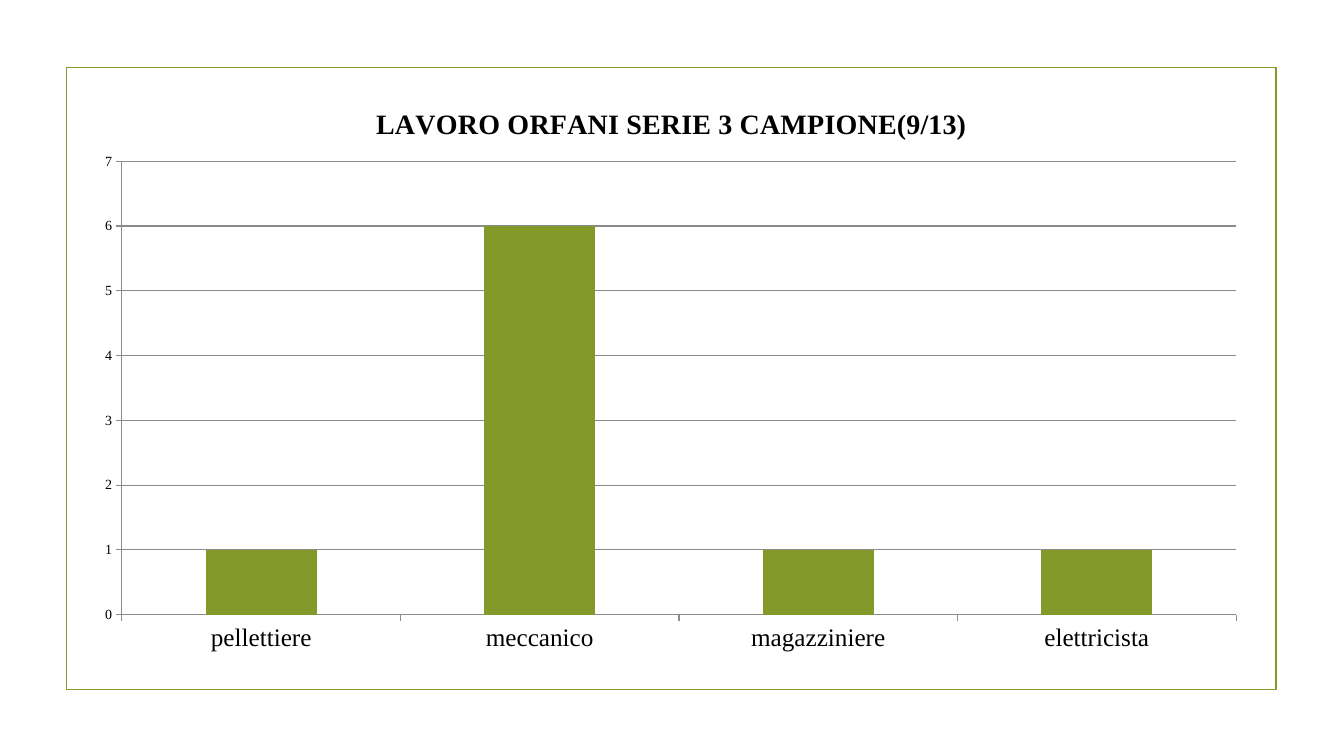
"""Build the slide with the column chart of the orphans' trades."""
import dataclasses
import typing

import pptx
import pptx.chart.data
import pptx.dml.color
import pptx.enum.chart
import pptx.enum.shapes
import pptx.oxml
import pptx.oxml.ns
import pptx.util

Inches = pptx.util.Inches
Pt = pptx.util.Pt
RGB = pptx.dml.color.RGBColor


@dataclasses.dataclass(frozen=True)
class Theme:
    face: str = "Times New Roman"
    green: RGB = RGB(0x83, 0x99, 0x2A)
    gray: RGB = RGB(0x8B, 0x8B, 0x8B)
    black: RGB = RGB(0, 0, 0)
    title: int = 20
    label: int = 18
    scale: int = 10
    border: float = 1.25
    rule: float = 0.75


@dataclasses.dataclass(frozen=True)
class Box:
    left: float
    top: float
    width: float
    height: float

    def place(self) -> list[int]:
        return [Inches(side) for side in dataclasses.astuple(self)]


@dataclasses.dataclass(frozen=True)
class Trade:
    name: str
    count: int


THEME = Theme()
FRAME = Box(0.66, 0.67, 12, 6.17)
CHART = Box(0.82, 0.83, 11.68, 5.76)
PLOT = Box(1.21, 1.6, 11.05, 4.5)
TITLE = "LAVORO ORFANI SERIE 3 CAMPIONE(9/13)"
TRADES = [
    Trade("pellettiere", 1),
    Trade("meccanico", 6),
    Trade("magazziniere", 1),
    Trade("elettricista", 1),
]


def apply(target: typing.Any, values: dict[str, typing.Any]) -> None:
    for name, value in values.items():
        setattr(target, name, value)


def style(font: typing.Any, size: int, bold: bool = False) -> None:
    apply(font, {"name": THEME.face, "size": Pt(size), "bold": bold})
    font.color.rgb = THEME.black


def stroke(line: typing.Any, color: RGB, width: float) -> None:
    line.color.rgb = color
    line.width = Pt(width)


def add_frame(slide: typing.Any) -> None:
    kind = pptx.enum.shapes.MSO_SHAPE.RECTANGLE
    frame = slide.shapes.add_shape(kind, *FRAME.place())
    frame.shadow.inherit = False
    frame.fill.background()
    stroke(frame.line, THEME.green, THEME.border)


def set_plot(chart: typing.Any) -> None:
    area = chart.element.chart.plotArea
    for old in area.findall(pptx.oxml.ns.qn("c:layout")):
        area.remove(old)
    parts = {
        "x": (PLOT.left - CHART.left) / CHART.width,
        "y": (PLOT.top - CHART.top) / CHART.height,
        "w": PLOT.width / CHART.width,
        "h": PLOT.height / CHART.height,
    }
    modes = "".join(f'<c:{key}Mode val="edge"/>' for key in "xy")
    sizes = "".join(f'<c:{key} val="{part:.4f}"/>' for key, part in parts.items())
    area.insert(0, pptx.oxml.parse_xml(
        f'<c:layout {pptx.oxml.ns.nsdecls("c")}><c:manualLayout>'
        f'<c:layoutTarget val="inner"/>{modes}{sizes}'
        "</c:manualLayout></c:layout>"
    ))


def set_axis(axis: typing.Any, size: int, values: dict[str, typing.Any]) -> None:
    marks = pptx.enum.chart.XL_TICK_MARK
    apply(axis, {"major_tick_mark": marks.OUTSIDE,
                 "minor_tick_mark": marks.NONE, **values})
    style(axis.tick_labels.font, size)
    stroke(axis.format.line, THEME.gray, THEME.rule)


def add_chart(slide: typing.Any) -> None:
    data = pptx.chart.data.CategoryChartData(number_format="General")
    data.categories = [trade.name for trade in TRADES]
    data.add_series("Series 1", [trade.count for trade in TRADES])
    kind = pptx.enum.chart.XL_CHART_TYPE.COLUMN_STACKED
    chart = slide.shapes.add_chart(kind, *CHART.place(), data).chart
    apply(chart, {"has_legend": False, "has_title": True})
    style(chart.font, THEME.scale)

    text = chart.chart_title.text_frame
    text.text = TITLE
    style(text.paragraphs[0].runs[0].font, THEME.title, True)
    chart.chart_title.include_in_layout = False

    plot = chart.plots[0]
    apply(plot, {"gap_width": 150, "overlap": 100, "vary_by_categories": False})
    bars = plot.series[0].format
    bars.fill.solid()
    bars.fill.fore_color.rgb = THEME.green
    bars.line.fill.background()

    set_axis(chart.category_axis, THEME.label, {"has_major_gridlines": False})
    scale = {"has_major_gridlines": True, "minimum_scale": 0,
             "maximum_scale": 7, "major_unit": 1}
    set_axis(chart.value_axis, THEME.scale, scale)
    stroke(chart.value_axis.major_gridlines.format.line, THEME.gray, THEME.rule)
    set_plot(chart)


def main() -> None:
    deck = pptx.Presentation()
    apply(deck, {"slide_width": Inches(13.33), "slide_height": Inches(7.5)})
    slide = deck.slides.add_slide(deck.slide_layouts[6])
    add_frame(slide)
    add_chart(slide)
    deck.save("out.pptx")


if __name__ == "__main__":
    main()
